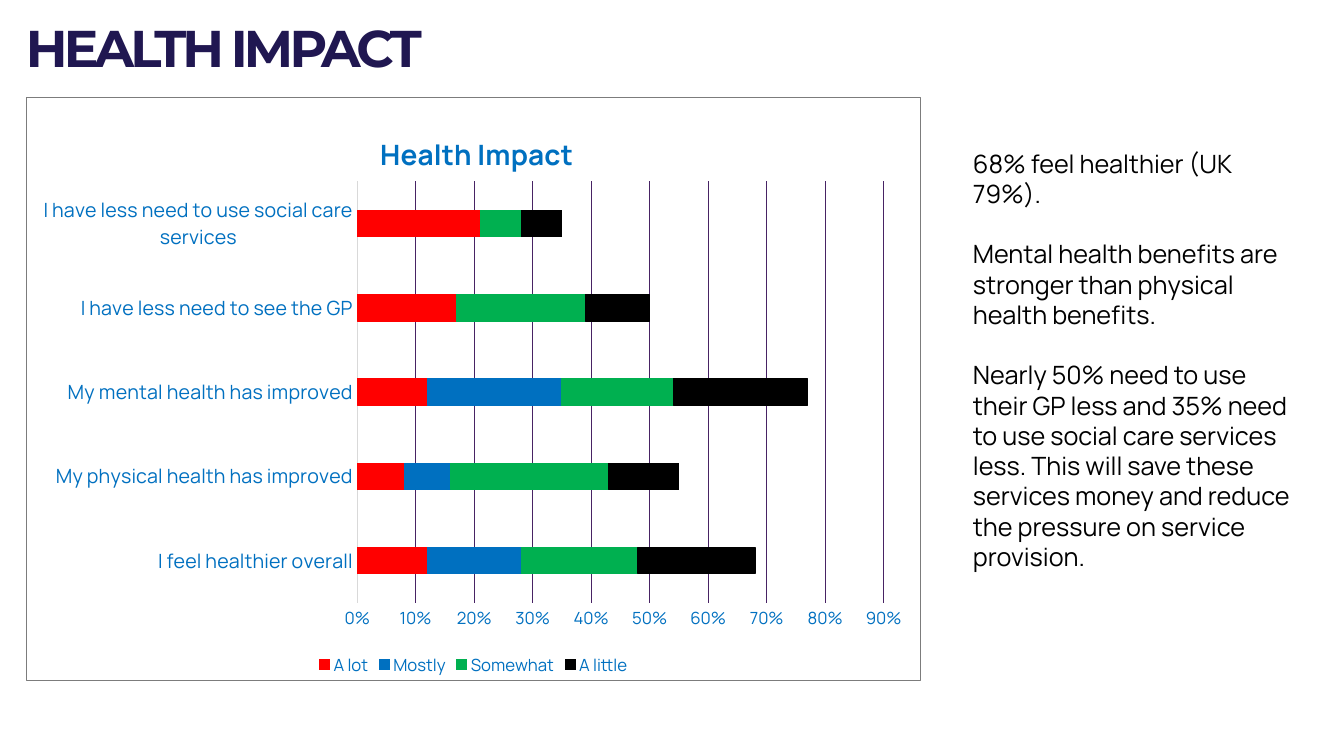
"""Build the Health Impact slide with a stacked bar chart and commentary."""
import pptx
import pptx.chart.data
import pptx.dml.color
import pptx.enum.chart
import pptx.enum.text
import pptx.oxml
import pptx.oxml.ns
import pptx.util

RGBColor = pptx.dml.color.RGBColor
NAVY = RGBColor(0x20, 0x17, 0x51)
BLUE = RGBColor(0x00, 0x70, 0xC0)
RED = RGBColor(0xFF, 0x00, 0x00)
GREEN = RGBColor(0x00, 0xB0, 0x50)
BLACK = RGBColor(0x00, 0x00, 0x00)
PURPLE = RGBColor(0x47, 0x23, 0x64)
PALE_GREY = RGBColor(0xD9, 0xD9, 0xD9)
BORDER_GREY = RGBColor(0x7C, 0x7C, 0x7C)

CATEGORIES = [
    "I feel healthier overall",
    "My physical health has improved",
    "My mental health has improved",
    "I have less need to see the GP",
    "I have less need to use social care services",
]
SERIES = [
    ("A lot", RED, (0.12, 0.08, 0.12, 0.17, 0.21)),
    ("Mostly", BLUE, (0.16, 0.08, 0.23, 0, 0)),
    ("Somewhat", GREEN, (0.2, 0.27, 0.19, 0.22, 0.07)),
    ("A little", BLACK, (0.2, 0.12, 0.23, 0.11, 0.07)),
]
COMMENTS = [
    "68% feel healthier (UK 79%).",
    "Mental health benefits are stronger than physical health benefits.",
    "Nearly 50% need to use their GP less and 35% need to use social care "
    "services less. This will save these services money and reduce the "
    "pressure on service provision.",
]


class SlideBuilder:
    """Hold the style and the current slide, and add its elements."""

    body_font = "Manrope"
    title_font = "Montserrat"
    line_width = pptx.util.Pt(0.75)

    def __init__(self, presentation):
        self.slide = presentation.slides.add_slide(presentation.slide_layouts[5])

    @staticmethod
    def px(value):
        """Turn pixels into EMU."""
        return pptx.util.Emu(round(value * 914400 / 100.8))

    def box(self, *lengths):
        """Turn a left, top, width, height box into EMU."""
        return [self.px(length) for length in lengths]

    def style_font(self, font, size, color, name=None, bold=False):
        """Set the look of a font."""
        font.name = name or self.body_font
        font.size = pptx.util.Pt(size)
        font.color.rgb = color
        font.bold = bold

    def style_line(self, line, color):
        """Set a thin line of one colour."""
        line.color.rgb = color
        line.width = self.line_width

    def title(self, text, *lengths):
        """Move, fill and format the title placeholder."""
        shape = self.slide.shapes.title
        shape.left, shape.top, shape.width, shape.height = self.box(*lengths)
        frame = shape.text_frame
        frame.margin_left = frame.margin_top = 0
        frame.margin_right = frame.margin_bottom = 0
        frame.vertical_anchor = pptx.enum.text.MSO_ANCHOR.TOP
        frame.auto_size = pptx.enum.text.MSO_AUTO_SIZE.NONE
        frame.text = text
        paragraph = frame.paragraphs[0]
        paragraph.alignment = pptx.enum.text.PP_ALIGN.LEFT
        paragraph.line_spacing = pptx.util.Pt(32.3)
        self.style_font(paragraph.font, 36.9, NAVY, self.title_font, True)
        paragraph.runs[0].font._element.set("spc", "-280")

    def text(self, texts, *lengths):
        """Add a wrapped text box with a line of space between paragraphs."""
        frame = self.slide.shapes.add_textbox(*self.box(*lengths)).text_frame
        frame.word_wrap = True
        frame.auto_size = pptx.enum.text.MSO_AUTO_SIZE.SHAPE_TO_FIT_TEXT
        for index, text in enumerate(texts):
            paragraph = frame.add_paragraph() if index else frame.paragraphs[0]
            paragraph.text = text
            if index:
                paragraph.space_before = pptx.util.Pt(21.6)
            self.style_font(paragraph.font, 18, BLACK)

    @staticmethod
    def lay_out(element, index, **fractions):
        """Place a chart part by fractions of the chart size."""
        for old_layout in element.findall(pptx.oxml.ns.qn("c:layout")):
            element.remove(old_layout)
        target = '<c:layoutTarget val="inner"/>' if "w" in fractions else ""
        modes = "".join(f'<c:{key}Mode val="edge"/>' for key in "xy")
        values = "".join(f'<c:{key} val="{value}"/>' for key, value in fractions.items())
        element.insert(index, pptx.oxml.parse_xml(
            f'<c:layout {pptx.oxml.ns.nsdecls("c")}><c:manualLayout>'
            f"{target}{modes}{values}</c:manualLayout></c:layout>"))

    def add_border(self, chart, color):
        """Frame the chart area with a thin line."""
        border = pptx.oxml.parse_xml(
            f'<c:spPr {pptx.oxml.ns.nsdecls("c", "a")}><a:noFill/>'
            f'<a:ln w="{self.line_width}"><a:solidFill><a:srgbClr val="{color}"/>'
            "</a:solidFill></a:ln></c:spPr>")
        chart.element.find(pptx.oxml.ns.qn("c:chart")).addnext(border)

    def bar_chart(self, title, categories, series_rows, *lengths):
        """Add a stacked bar chart with a title and a legend."""
        data = pptx.chart.data.CategoryChartData(number_format="0%")
        data.categories = categories
        for name, _, values in series_rows:
            data.add_series(name, values)
        chart = self.slide.shapes.add_chart(
            pptx.enum.chart.XL_CHART_TYPE.BAR_STACKED, *self.box(*lengths), data).chart
        self.style_font(chart.font, 10, BLUE)
        self.add_border(chart, BORDER_GREY)

        chart.has_title = True
        chart.chart_title.text_frame.text = title
        self.style_font(chart.chart_title.text_frame.paragraphs[0].font, 20, BLUE, bold=True)
        self.lay_out(chart.chart_title._element, 1, x=0.39, y=0.05)
        plot_area = chart.element.find(".//" + pptx.oxml.ns.qn("c:plotArea"))
        self.lay_out(plot_area, 0, x=0.37, y=0.144, w=0.589, h=0.723)

        chart.has_legend = True
        chart.legend.position = pptx.enum.chart.XL_LEGEND_POSITION.BOTTOM
        chart.legend.include_in_layout = False
        self.style_font(chart.legend.font, 12, BLUE)

        for axis, size in ((chart.category_axis, 14), (chart.value_axis, 12)):
            axis.major_tick_mark = pptx.enum.chart.XL_TICK_MARK.NONE
            axis.minor_tick_mark = pptx.enum.chart.XL_TICK_MARK.NONE
            self.style_font(axis.tick_labels.font, size, BLUE)
        self.style_line(chart.category_axis.format.line, PALE_GREY)
        value_axis = chart.value_axis
        value_axis.minimum_scale, value_axis.maximum_scale = 0, 0.9
        value_axis.major_unit = 0.1
        value_axis.tick_labels.number_format = "0%"
        value_axis.tick_labels.number_format_is_linked = False
        value_axis.format.line.fill.background()
        value_axis.has_major_gridlines = True
        self.style_line(value_axis.major_gridlines.format.line, PURPLE)

        plot = chart.plots[0]
        plot.gap_width, plot.overlap = 219, 100
        plot.vary_by_categories = False
        for series, (_, color, _) in zip(plot.series, series_rows):
            series.format.fill.solid()
            series.format.fill.fore_color.rgb = color
            self.style_line(series.format.line, color)


def main():
    """Build and save the presentation."""
    presentation = pptx.Presentation()
    presentation.slide_width = SlideBuilder.px(1344)
    presentation.slide_height = SlideBuilder.px(756)
    builder = SlideBuilder(presentation)
    builder.title("HEALTH IMPACT", 26, 33, 919, 100)
    builder.bar_chart("Health Impact", CATEGORIES, SERIES, 26, 97, 895, 584)
    builder.text(COMMENTS, 963, 143, 341, 468)
    presentation.save("out.pptx")


if __name__ == "__main__":
    main()
